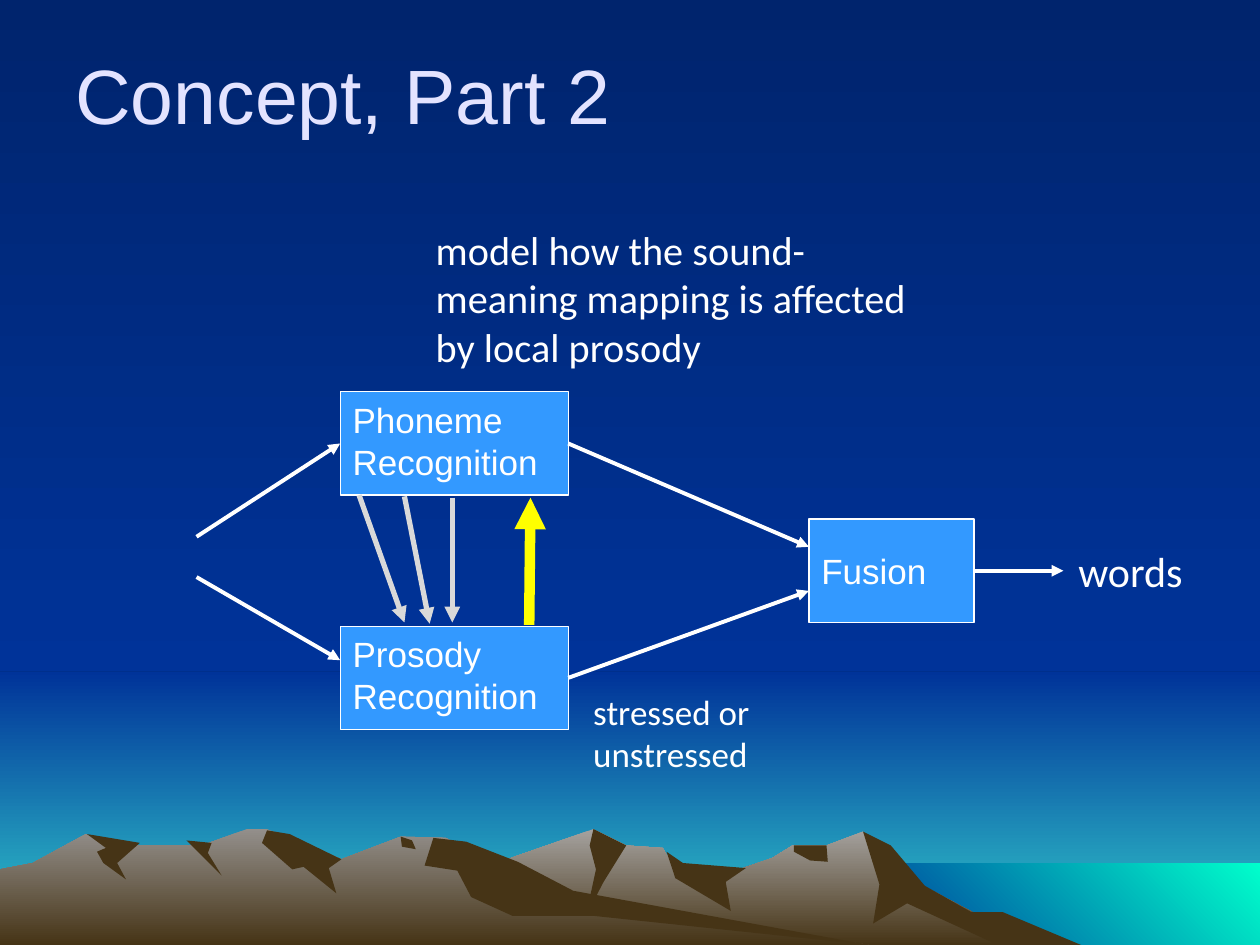
from lxml import etree
from pptx import Presentation
from pptx import util as u
from pptx.dml.color import RGBColor
from pptx.enum import shapes, text
from pptx.oxml.ns import qn

NIGHT = RGBColor(0x00, 0x24, 0x6D)
BLUE = RGBColor(0x00, 0x33, 0x99)
TEAL = RGBColor(0x33, 0xCC, 0xCC)
AQUA = RGBColor(0x00, 0xFF, 0xCC)
EARTH = RGBColor(0x46, 0x34, 0x16)
PALE_ROCK = RGBColor(0xA5, 0xA2, 0x9F)
ROCK = RGBColor(0x93, 0x8F, 0x8B)
STAGE_BLUE = RGBColor(0x33, 0x99, 0xFF)
LAVENDER = RGBColor(0xE3, 0xE3, 0xFF)
WHITE = RGBColor(0xFF, 0xFF, 0xFF)
YELLOW = RGBColor(0xFF, 0xFF, 0x00)
GREY = RGBColor(0xD9, 0xD9, 0xD9)
DOWNWARD, UP_RIGHT = 270, 45


def paint(fill, colors, angle=DOWNWARD):
    """Fill with one colour, or with a gradient between two."""
    if len(colors) == 1:
        fill.solid()
        fill.fore_color.rgb = colors[0]
        return
    fill.gradient()
    fill.gradient_angle = angle
    for stop, color in zip(fill.gradient_stops, colors):
        stop.color.rgb = color


def write(holder, lines, font, size, color=WHITE, **frame_format):
    """Put one left-aligned paragraph per line into a shape."""
    frame = holder.text_frame
    frame_format = {"word_wrap": True, "vertical_anchor": text.MSO_ANCHOR.TOP, **frame_format}
    for attribute, value in frame_format.items():
        setattr(frame, attribute, value)
    frame.text = "\n".join(lines)
    for paragraph in frame.paragraphs:
        paragraph.alignment = text.PP_ALIGN.LEFT
        paragraph.font.color.rgb = color
        for attribute, value in {"name": font, "size": u.Pt(size)}.items():
            setattr(paragraph.font, attribute, value)


deck = Presentation()
deck.slide_width, deck.slide_height = u.Inches(10), u.Inches(7.5)
slide = deck.slides.add_slide(deck.slide_layouts[6])
paint(slide.background.fill, (NIGHT, BLUE))

# Horizon glow, sky and sea
horizon = 5.33
for left, top, width, height, colors, angle in (
    (0, horizon, 10, 7.5 - horizon, (BLUE, TEAL), DOWNWARD),
    (0, 0, 10, horizon, (NIGHT, BLUE), DOWNWARD),
    (6.83, 6.85, 3.17, 0.65, (BLUE, AQUA), UP_RIGHT),
):
    band = slide.shapes.add_shape(
        shapes.MSO_SHAPE.RECTANGLE, *map(u.Inches, (left, top, width, height)))
    band.shadow.inherit = False
    band.line.fill.background()
    paint(band.fill, colors, angle)

# Mountains and their shaded faces, in hundredths of an inch
mountains = (
    # Right range
    ((PALE_ROCK, EARTH), (
        (821, 750), (723, 698), (685, 660), (656, 671), (629, 671), (613, 681), (566, 697),
        (536, 690), (526, 673), (497, 671), (471, 658), (394, 685), (327, 709), (258, 750))),
    ((EARTH,), (
        (858, 750), (796, 724), (771, 724), (734, 703), (707, 671), (685, 660), (698, 702),
        (693, 733), (720, 717), (792, 750))),
    ((EARTH,), ((471, 658), (468, 671), (473, 690), (465, 727), (479, 700), (497, 671))),
    ((EARTH,), ((529, 676), (536, 697), (580, 723), (576, 700), (592, 689), (542, 685))),
    ((EARTH,), ((656, 671), (630, 671), (630, 676), (643, 683), (657, 684))),
    # Left range
    ((ROCK, EARTH), (
        (690, 750), (432, 712), (354, 665), (318, 664), (271, 682), (212, 658), (196, 658),
        (160, 671), (94, 671), (68, 662), (26, 685), (0, 690), (0, 750))),
    ((EARTH,), (
        (212, 659), (208, 669), (232, 690), (241, 688), (267, 709), (261, 689), (271, 682),
        (230, 662))),
    ((EARTH,), (
        (370, 668), (344, 665), (337, 687), (363, 691), (374, 712), (407, 727), (472, 727),
        (690, 750), (455, 707), (411, 684))),
    ((EARTH,), ((318, 664), (327, 667), (330, 674), (319, 672))),
    ((EARTH,), ((148, 667), (168, 669), (165, 677), (176, 695))),
    ((EARTH,), (
        (69, 662), (111, 669), (93, 685), (100, 698), (82, 685), (77, 676), (84, 673))),
)
for colors, outline in mountains:
    builder = slide.shapes.build_freeform(*outline[0], scale=u.Inches(0.01))
    builder.add_line_segments(outline[1:], close=True)
    face = builder.convert_to_shape()
    face.shadow.inherit = False
    face.line.fill.background()
    paint(face.fill, colors)

# Title and captions
for left, top, width, height, lines, font, size, color, anchor in (
    (0.5, 0.12, 9, 1.25, ["Concept, Part 2"], "Arial", 44, LAVENDER, text.MSO_ANCHOR.MIDDLE),
    (8.46, 4.28, 1.31, 0.5, ["words"], "Calibri", 24, WHITE, text.MSO_ANCHOR.TOP),
    (4.61, 5.43, 1.7, 0.77, ["stressed or", "unstressed"], "Calibri", 20, WHITE,
     text.MSO_ANCHOR.TOP),
    (3.36, 1.74, 4.21, 1.26,
     ["model how the sound-meaning mapping is affected by local prosody"],
     "Calibri", 23, WHITE, text.MSO_ANCHOR.TOP),
):
    caption = slide.shapes.add_textbox(*map(u.Inches, (left, top, width, height)))
    write(caption, lines, font, size, color, vertical_anchor=anchor)

# Processing stages
for left, top, width, lines, inset in (
    (2.7, 3.11, 1.81, ["Phoneme", "Recognition"], 0.05),
    (2.7, 4.97, 1.81, ["Prosody", "Recognition"], 0.05),
    (6.42, 4.12, 1.31, ["Fusion"], 0.24),
):
    stage = slide.shapes.add_shape(
        shapes.MSO_SHAPE.RECTANGLE, *map(u.Inches, (left, top, width, 0.82)))
    stage.shadow.inherit = False
    paint(stage.fill, (STAGE_BLUE,))
    stage.line.color.rgb = WHITE
    stage.line.width = u.Pt(0.75)
    write(stage, lines, "Arial", 20, margin_top=u.Inches(inset))

# Arrows: signal flow, phoneme cues, prosody feedback
for color, weight, routes in (
    (WHITE, 2.25, ((1.56, 4.26, 2.7, 3.52), (1.56, 4.58, 2.7, 5.24), (4.51, 3.52, 6.42, 4.34),
                   (4.51, 5.38, 6.42, 4.69), (7.72, 4.53, 8.44, 4.53))),
    (GREY, 3, ((2.85, 3.93, 3.21, 4.94), (3.21, 3.94, 3.41, 4.95), (3.59, 3.95, 3.59, 4.94))),
    (YELLOW, 6, ((4.2, 4.96, 4.21, 3.95),)),
):
    for route in routes:
        arrow = slide.shapes.add_connector(
            shapes.MSO_CONNECTOR.STRAIGHT, *map(u.Inches, route))
        arrow.line.color.rgb = color
        arrow.line.width = u.Pt(weight)
        outline_xml = arrow._element.spPr.find(qn("a:ln"))
        etree.SubElement(outline_xml, qn("a:tailEnd"), type="triangle")
        etree.SubElement(arrow._element.spPr, qn("a:effectLst"))

deck.save("out.pptx")
